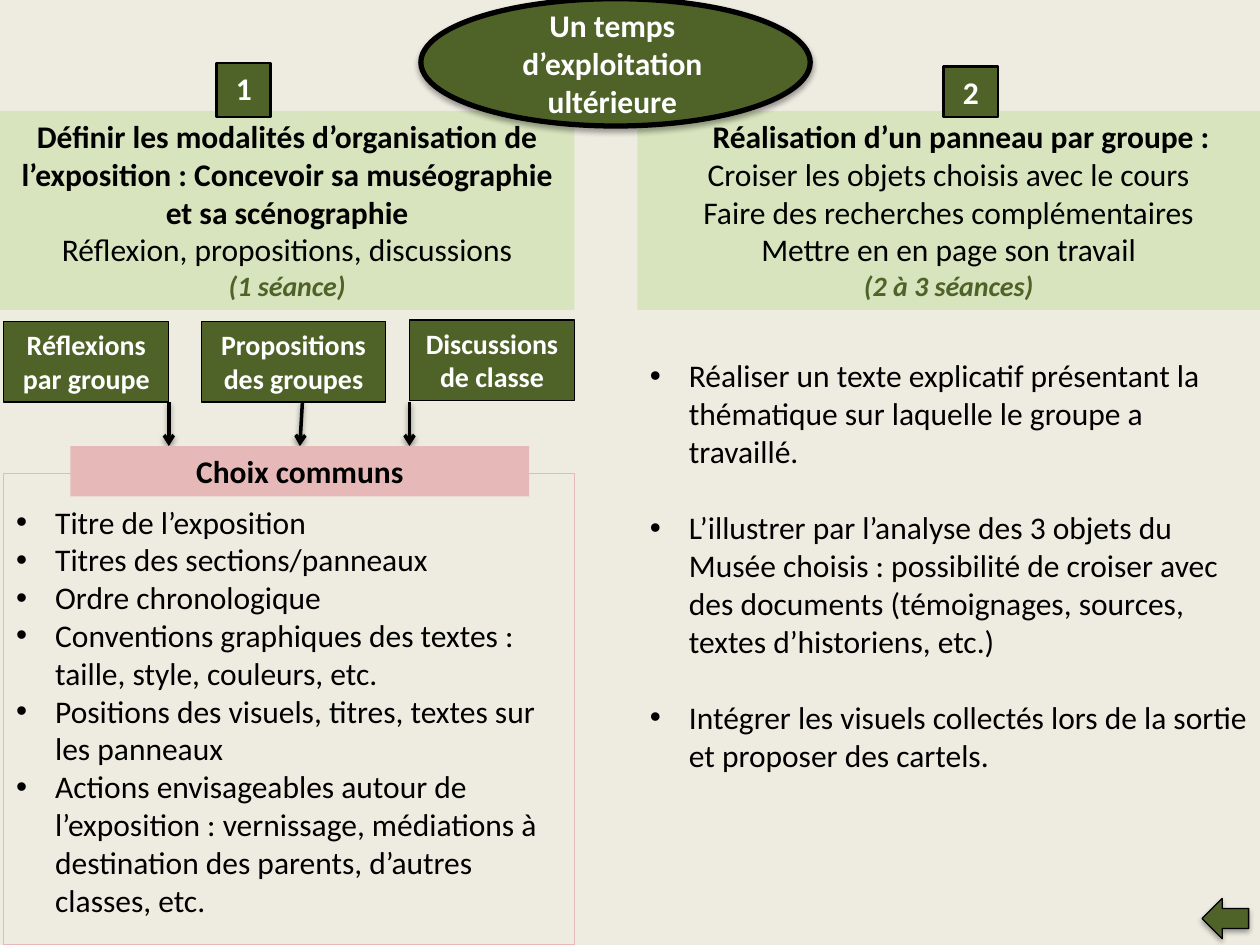
"""Build the slide on a follow-up session: exhibition planning and group panels."""
from lxml.etree import SubElement
from pptx import Presentation
from pptx.dml.color import RGBColor as RGB
from pptx.enum.shapes import MSO_CONNECTOR as Link, MSO_SHAPE as Kind
from pptx.enum.text import PP_ALIGN as Align
from pptx.oxml.ns import qn
from pptx.util import Pt

CREAM = RGB(0xEE, 0xEC, 0xE1)
LIME = RGB(0xD7, 0xE4, 0xBD)
OLIVE = RGB(0x4F, 0x62, 0x28)
PINK = RGB(0xE6, 0xB9, 0xB8)
BLACK = RGB(0, 0, 0)
WHITE = RGB(0xFF, 0xFF, 0xFF)

deck = Presentation()
deck.slide_width, deck.slide_height = Pt(720), Pt(540)
col, row = deck.slide_width / 100, deck.slide_height / 75
slide = deck.slides.add_slide(deck.slide_layouts[6])
slide.background.fill.solid()
slide.background.fill.fore_color.rgb = CREAM


def box(kind, area, fill=None, edge=None, width=0.75, paras=(), shade=None, bullet=False, gap=0, top=0.5):
    """Draw a shape at a grid area; each paragraph is (text, size, colour, bold, italic, indent)."""
    x, y, w, h = area
    place = [int(v) for v in (x * col, y * row, w * col, h * row)]
    if kind is None:
        shape = slide.shapes.add_textbox(*place)
    else:
        shape = slide.shapes.add_shape(kind, *place)
        shape.shadow.inherit = False
        if fill is None:
            shape.fill.background()
        else:
            shape.fill.solid()
            shape.fill.fore_color.rgb = fill
        if edge is None:
            shape.line.fill.background()
        else:
            shape.line.color.rgb = edge
            shape.line.width = Pt(width)
    if shade:
        cast(shape, shade)
    frame = shape.text_frame
    frame.word_wrap = True
    frame.vertical_anchor = 1
    frame.margin_top = int(top * row)
    for i, (text, size, hue, bold, slant, inset) in enumerate(paras):
        para = frame.paragraphs[0] if i == 0 else frame.add_paragraph()
        para.alignment = Align.LEFT if bullet else Align.CENTER
        para.space_before = Pt(gap if i else 0)
        props = para._p.get_or_add_pPr()
        if inset:
            props.set("marL", str(int(inset * col)))
        if bullet:
            props.set("indent", str(int(-inset * col)))
            SubElement(props, qn("a:buFont")).set("typeface", "Arial")
            SubElement(props, qn("a:buChar")).set("char", "•")
        run = para.add_run()
        run.text = text
        font = run.font
        font.name, font.size, font.bold, font.italic = "Calibri", Pt(size), bold, slant
        font.color.rgb = hue


def cast(shape, shade):
    """Give a shape a soft black shadow from (opacity, blur, distance)."""
    alpha, blur, dist = shade
    props = shape._element.spPr
    for old in props.findall(qn("a:effectLst")):
        props.remove(old)
    drop = SubElement(SubElement(props, qn("a:effectLst")), qn("a:outerShdw"))
    for key, value in (("blurRad", Pt(blur)), ("dist", Pt(dist)), ("dir", 5400000), ("rotWithShape", 0)):
        drop.set(key, str(int(value)))
    tint = SubElement(drop, qn("a:srgbClr"))
    tint.set("val", "000000")
    SubElement(tint, qn("a:alpha")).set("val", str(alpha * 1000))


LEFT, RIGHT = (0, 45.6), (50.6, 49.4)
SOFT = (35, 3.1, 1.8)

heads = [
    (LEFT, 0, "Définir les modalités d’organisation de l’exposition : Concevoir sa muséographie et sa scénographie",
     ["Réflexion, propositions, discussions"], "(1 séance)"),
    (RIGHT, 2, "Réalisation d’un panneau par groupe :",
     ["Croiser les objets choisis avec le cours", "Faire des recherches complémentaires",
      "Mettre en en page son travail"], "(2 à 3 séances)"),
]
for (x, w), inset, title, steps, time in heads:
    lines = [(title, 18, BLACK, True, False, inset)]
    lines += [(step, 18, BLACK, False, False, 0) for step in steps]
    lines.append((time, 16, OLIVE, True, True, 0))
    box(Kind.RECTANGLE, (x, 8.8, w, 15.8), LIME, paras=lines)

box(Kind.OVAL, (33.4, -0.1, 30.9, 10.1), OLIVE, BLACK, 3, shade=SOFT)
box(None, (35.7, 0, 25.8, 10.1), paras=[("Un temps d’exploitation ultérieure", 18, WHITE, True, False, 0)])

for text, x, y, h in (("1", 17.2, 5, 4.3), ("2", 74.9, 5.3, 4)):
    box(Kind.RECTANGLE, (x, y, 4.3, h), OLIVE, BLACK, 1.5, [(text, 18, WHITE, True, False, 0)])

for start, end in ((13.4, 13.4), (24, 23.8), (32.5, 32.5)):
    ends = [int(v) for v in (start * col, 31.9 * row, end * col, 35.4 * row)]
    arrow = slide.shapes.add_connector(Link.STRAIGHT, *ends)
    arrow.line.color.rgb = BLACK
    arrow.line.width = Pt(2)
    SubElement(arrow.line._get_or_add_ln(), qn("a:tailEnd")).set("type", "arrow")
    cast(arrow, (38, 3.1, 1.6))

common = [
    "Titre de l’exposition",
    "Titres des sections/panneaux",
    "Ordre chronologique",
    "Conventions graphiques des textes : taille, style, couleurs, etc.",
    "Positions des visuels, titres, textes sur les panneaux",
    "Actions envisageables autour de l’exposition : vernissage, médiations à destination des parents, "
    "d’autres classes, etc.",
]
box(Kind.RECTANGLE, (0.3, 37.6, 45.3, 37.4), edge=PINK, bullet=True, top=2.3,
    paras=[(text, 18, BLACK, False, False, 3.1) for text in common])
box(Kind.RECTANGLE, (5.6, 35.4, 36.4, 4), PINK, paras=[("Choix communs", 18, BLACK, True, False, 0)])

for text, x, y, w in (("Réflexions par groupe", 0.3, 25.5, 13.1),
                      ("Propositions des groupes", 16, 25.5, 14.6),
                      ("Discussions de classe", 32.5, 25.4, 13.1)):
    box(Kind.RECTANGLE, (x, y, w, 6.4), OLIVE, BLACK, paras=[(text, 16, WHITE, True, False, 0)])

tasks = [
    "Réaliser un texte explicatif présentant la thématique sur laquelle le groupe a travaillé.",
    "L’illustrer par l’analyse des 3 objets du Musée choisis : possibilité de croiser avec des documents "
    "(témoignages, sources, textes d’historiens, etc.)",
    "Intégrer les visuels collectés lors de la sortie et proposer des cartels.",
]
box(None, (RIGHT[0], 27.8, RIGHT[1], 34.3), bullet=True, gap=22,
    paras=[(text, 18, BLACK, False, False, 3.1) for text in tasks])

box(Kind.LEFT_ARROW, (95.4, 71.3, 3.7, 3.2), OLIVE, BLACK, shade=SOFT)

deck.save("out.pptx")
